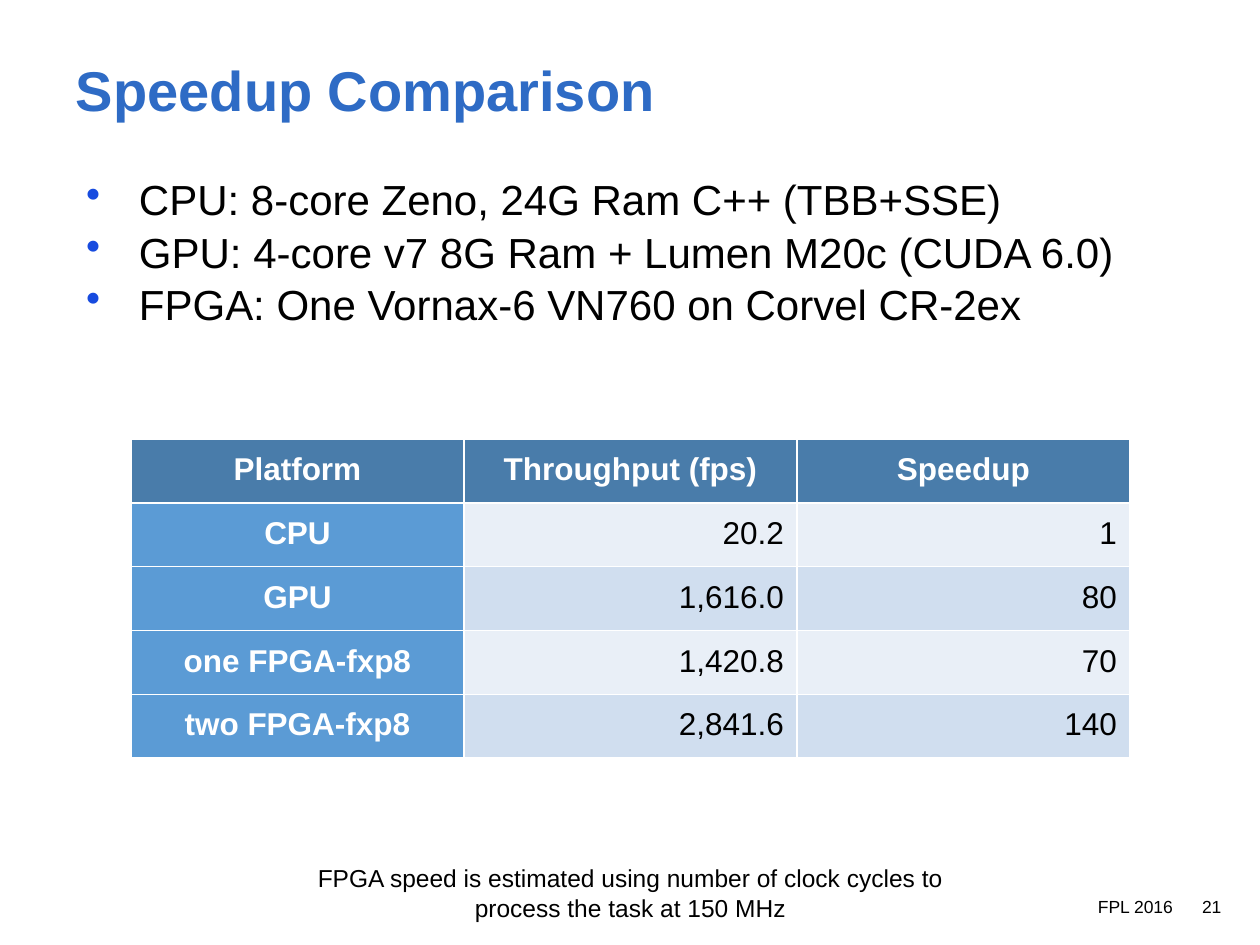
from lxml import etree
from pptx import Presentation, util as u
from pptx.dml.color import RGBColor
from pptx.enum import text
from pptx.oxml.ns import qn

PX = 914400 / 126
A = text.PP_ALIGN
V = text.MSO_ANCHOR


def px(n):
    return u.Emu(round(n * PX))


def rgb(h):
    return RGBColor.from_string(h)


def add_color(parent, h):
    etree.SubElement(parent, qn("a:srgbClr"), val=h)


class Deck:
    FONT = "Arial"
    BLACK, WHITE, BLUE, BULLET = "000000", "FFFFFF", "2E6BC5", "174BDF"
    HEAD, SIDE, BANDS = "497CAA", "5B9BD5", ("E9EFF7", "D0DEEF")
    INSET = 13

    def __init__(self, w, h):
        self.prs = Presentation()
        self.prs.slide_width, self.prs.slide_height = px(w), px(h)
        self.s = self.prs.slides.add_slide(self.prs.slide_layouts[6])

    def style(self, p, align=A.LEFT, color=BLACK, **font):
        p.alignment = align
        for r in p.runs:
            for k, v in {"name": self.FONT, **font}.items():
                setattr(r.font, k, v)
            r.font.color.rgb = rgb(color)

    def text(self, box, lines, inset=INSET, frame=None, bullets=False, **fmt):
        sp = self.s.shapes.add_textbox(*map(px, box))
        tf = sp.text_frame
        sides = ("left", "top", "right", "bottom")
        values = {f"margin_{k}": px(inset) for k in sides}
        for k, v in {"word_wrap": True, **values, **(frame or {})}.items():
            setattr(tf, k, v)
        for i, line in enumerate(lines):
            p = tf.paragraphs[0] if i == 0 else tf.add_paragraph()
            p.add_run().text = line
            if bullets:
                self.bullet(p)
                if i:
                    p.space_before = u.Pt(1)
            self.style(p, **fmt)

    def bullet(self, p):
        pr = p._p.get_or_add_pPr()
        pr.set("marL", str(px(63)))
        pr.set("indent", str(px(-53)))
        add_color(etree.SubElement(pr, qn("a:buClr")), self.BULLET)
        etree.SubElement(pr, qn("a:buChar"), char="•")

    def border(self, cell):
        pr = cell._tc.get_or_add_tcPr()
        for i, side in enumerate(("lnL", "lnR", "lnT", "lnB")):
            ln = etree.Element(qn(f"a:{side}"), w=str(u.Pt(1)))
            add_color(etree.SubElement(ln, qn("a:solidFill")), self.WHITE)
            pr.insert(i, ln)

    def table(self, x, y, col_w, row_h, rows):
        n, m = len(rows), len(rows[0])
        size = (col_w * m, row_h * n)
        t = self.s.shapes.add_table(n, m, *map(px, (x, y, *size))).table
        for i, row in enumerate(rows):
            for j, value in enumerate(row):
                c = t.cell(i, j)
                label = i == 0 or j == 0
                fill = (self.HEAD if i == 0 else self.SIDE if j == 0
                        else self.BANDS[(i - 1) % 2])
                c.text = value
                c.fill.solid()
                c.fill.fore_color.rgb = rgb(fill)
                for side in ("left", "right", "top", "bottom"):
                    setattr(c, f"margin_{side}", px(self.INSET))
                self.border(c)
                self.style(c.text_frame.paragraphs[0],
                           align=A.CENTER if label else A.RIGHT,
                           color=self.WHITE if label else self.BLACK,
                           size=u.Pt(18), bold=label)


def main():
    d = Deck(1260, 945)
    d.text((1092, 890, 89, 32), ["FPL 2016"], inset=6, size=u.Pt(10))
    d.text((63, 31, 1029, 105), ["Speedup Comparison"],
           frame={"vertical_anchor": V.BOTTOM},
           color=d.BLUE, size=u.Pt(32), bold=True)
    d.text((63, 158, 1092, 217),
           ["CPU: 8-core Zeno, 24G Ram C++ (TBB+SSE)",
            "GPU: 4-core v7 8G Ram + Lumen M20c (CUDA 6.0)",
            "FPGA: One Vornax-6 VN760 on Corvel CR-2ex"],
           frame={"margin_top": px(16)}, bullets=True, size=u.Pt(24))
    d.text((1196, 890, 34, 32), ["21"], inset=6,
           frame={"word_wrap": False}, size=u.Pt(10))
    d.table(131, 439, 333, 52, [
        ("Platform", "Throughput (fps)", "Speedup"),
        ("CPU", "20.2", "1"),
        ("GPU", "1,616.0", "80"),
        ("one FPGA-fxp8", "1,420.8", "70"),
        ("two FPGA-fxp8", "2,841.6", "140"),
    ])
    d.text((299, 852, 663, 81),
           ["FPGA speed is estimated using number of clock cycles to "
            "process the task at 150 MHz"],
           frame={"vertical_anchor": V.MIDDLE}, align=A.CENTER, size=u.Pt(14))
    d.prs.save("out.pptx")


if __name__ == "__main__":
    main()
